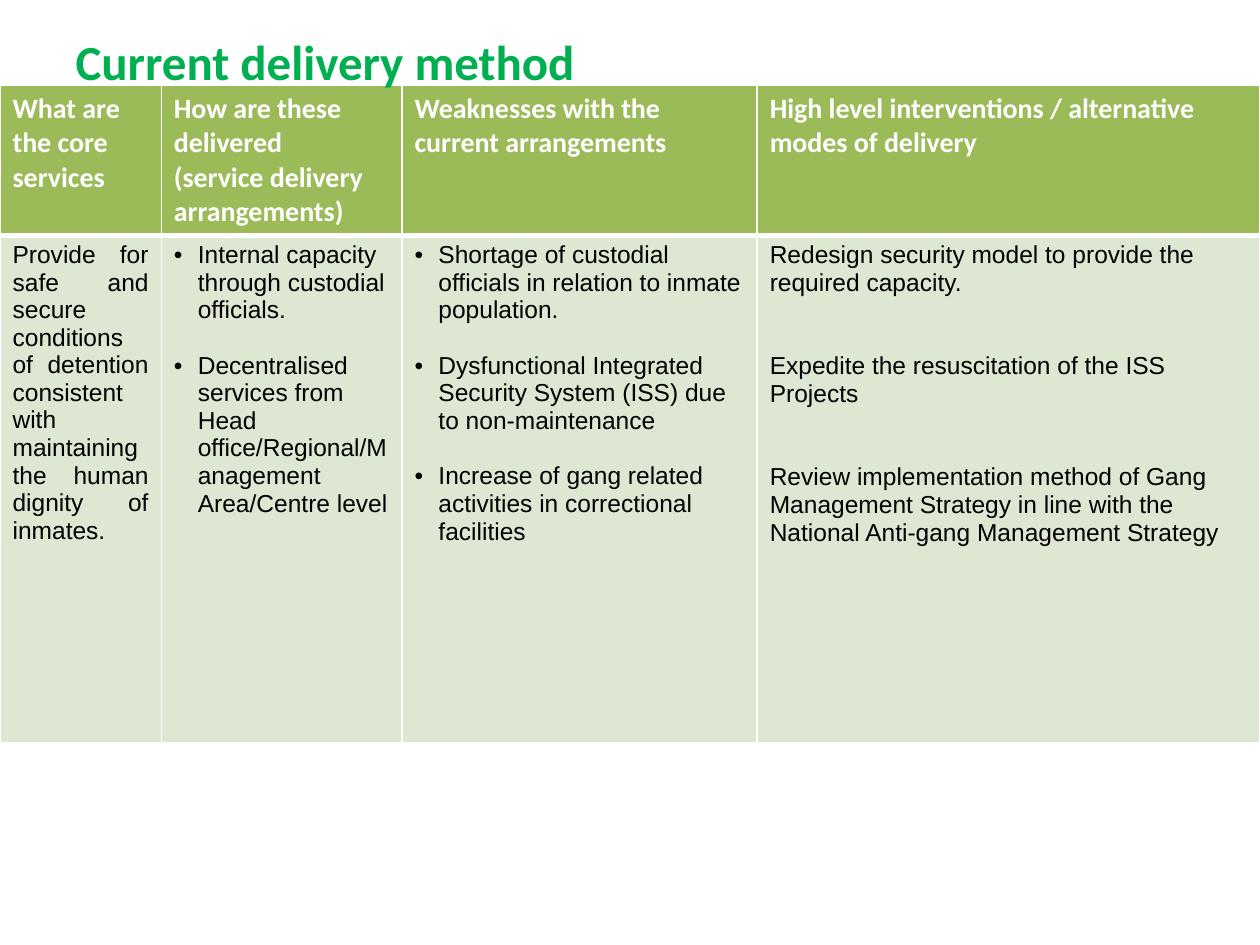
"""Build the slide that sets out the current delivery method."""
from dataclasses import dataclass

from lxml.etree import SubElement
from pptx import Presentation
from pptx.dml.color import RGBColor
from pptx.enum.text import MSO_ANCHOR, MSO_AUTO_SIZE, PP_ALIGN as Align
from pptx.oxml.ns import qn
from pptx.util import Inches, Pt

GREEN = RGBColor(0x00, 0xB0, 0x50)
OLIVE = RGBColor(0x9B, 0xBB, 0x59)
PALE = RGBColor(0xDE, 0xE7, 0xD1)
WHITE = RGBColor(0xFF, 0xFF, 0xFF)
BLACK = RGBColor(0x00, 0x00, 0x00)

WIDTH, HEIGHT = Inches(10), Inches(7.5)
TABLE_TOP = Inches(0.68)
ROW_HEIGHTS = Inches(1.18), Inches(4.03)
LINE = 16
INDENT = Inches(0.19)


@dataclass(frozen=True)
class Column:
    share: float
    heading: tuple[str, ...]
    items: tuple[str, ...]
    bullet: bool = False
    gap: int = LINE
    align: Align = Align.LEFT


COLUMNS = (
    Column(0.128, ("What are the core services",),
           ("Provide for safe and secure conditions of detention consistent with "
            "maintaining the human dignity of inmates.",), align=Align.JUSTIFY),
    Column(0.191, ("How are these delivered", "(service delivery arrangements)"),
           ("Internal capacity through custodial officials.",
            "Decentralised services from Head office/Regional/Management "
            "Area/Centre level"), bullet=True),
    Column(0.282, ("Weaknesses with the current arrangements",),
           ("Shortage of custodial officials in relation to inmate population.",
            "Dysfunctional Integrated Security System (ISS) due to non-maintenance",
            "Increase of gang related activities in correctional facilities"),
           bullet=True),
    Column(0.399, ("High level interventions / alternative modes of delivery",),
           ("Redesign security model to provide the required capacity.",
            "Expedite the resuscitation of the ISS Projects",
            "Review implementation method of Gang Management Strategy in line with "
            "the National Anti-gang Management Strategy"), gap=2 * LINE),
)


def add_bullet(p) -> None:
    """Give a paragraph a hanging bullet."""
    pPr = p._p.get_or_add_pPr()
    pPr.set("marL", str(INDENT))
    pPr.set("indent", str(-INDENT))
    SubElement(pPr, qn("a:buFont"), typeface="Arial")
    SubElement(pPr, qn("a:buChar"), char="•")


def write(tf, lines: tuple[str, ...], *, size: int, font: str, color: RGBColor,
          bold: bool = False, align: Align = Align.LEFT, gap: int = 0,
          bullet: bool = False) -> None:
    """Write formatted paragraphs into a text frame."""
    for i, line in enumerate(lines):
        p = tf.add_paragraph() if i else tf.paragraphs[0]
        p.alignment = align
        p.space_before = Pt(gap if i else 0)
        if bullet:
            add_bullet(p)
        r = p.add_run()
        r.text = line
        r.font.size, r.font.name, r.font.bold = Pt(size), font, bold
        r.font.color.rgb = color


def style_cell(cell, fill: RGBColor, top: int = 1, bottom: int = 1) -> None:
    """Fill a cell and draw its white borders."""
    tcPr = cell._tc.get_or_add_tcPr()
    for side, width in (("L", 1), ("R", 1), ("T", top), ("B", bottom)):
        ln = SubElement(tcPr, qn(f"a:ln{side}"), w=str(Pt(width)))
        SubElement(SubElement(ln, qn("a:solidFill")), qn("a:srgbClr"), val=str(WHITE))
    cell.fill.solid()
    cell.fill.fore_color.rgb = fill


def add_services_table(s) -> None:
    """Add the table of services, arrangements, weaknesses and interventions."""
    table = s.shapes.add_table(len(ROW_HEIGHTS), len(COLUMNS), 0, TABLE_TOP,
                               WIDTH, sum(ROW_HEIGHTS)).table
    for row, height in zip(table.rows, ROW_HEIGHTS):
        row.height = height
    for i, column in enumerate(COLUMNS):
        table.columns[i].width = int(WIDTH * column.share)
        head, body = table.cell(0, i), table.cell(1, i)
        style_cell(head, OLIVE, bottom=3)
        style_cell(body, PALE, top=3)
        write(head.text_frame, column.heading, size=16, font="Calibri",
              color=WHITE, bold=True)
        write(body.text_frame, column.items, size=14, font="Arial", color=BLACK,
              align=column.align, gap=column.gap, bullet=column.bullet)


def add_title(s, text: str) -> None:
    """Place the title in front of the table."""
    sp = s.shapes.title
    sp.left, sp.top = int(WIDTH * 0.05), Inches(0.2)
    sp.width, sp.height = int(WIDTH * 0.9), Inches(0.57)
    tf = sp.text_frame
    tf.word_wrap = True
    tf.auto_size = MSO_AUTO_SIZE.SHAPE_TO_FIT_TEXT
    tf.vertical_anchor = MSO_ANCHOR.TOP
    write(tf, (text,), size=28, font="Calibri", color=GREEN, bold=True)
    s.shapes._spTree.append(sp._element)


def main() -> None:
    """Build and save the presentation."""
    prs = Presentation()
    prs.slide_width, prs.slide_height = WIDTH, HEIGHT
    s = prs.slides.add_slide(prs.slide_layouts[5])
    add_services_table(s)
    add_title(s, "Current delivery method")
    prs.save("out.pptx")


if __name__ == "__main__":
    main()
